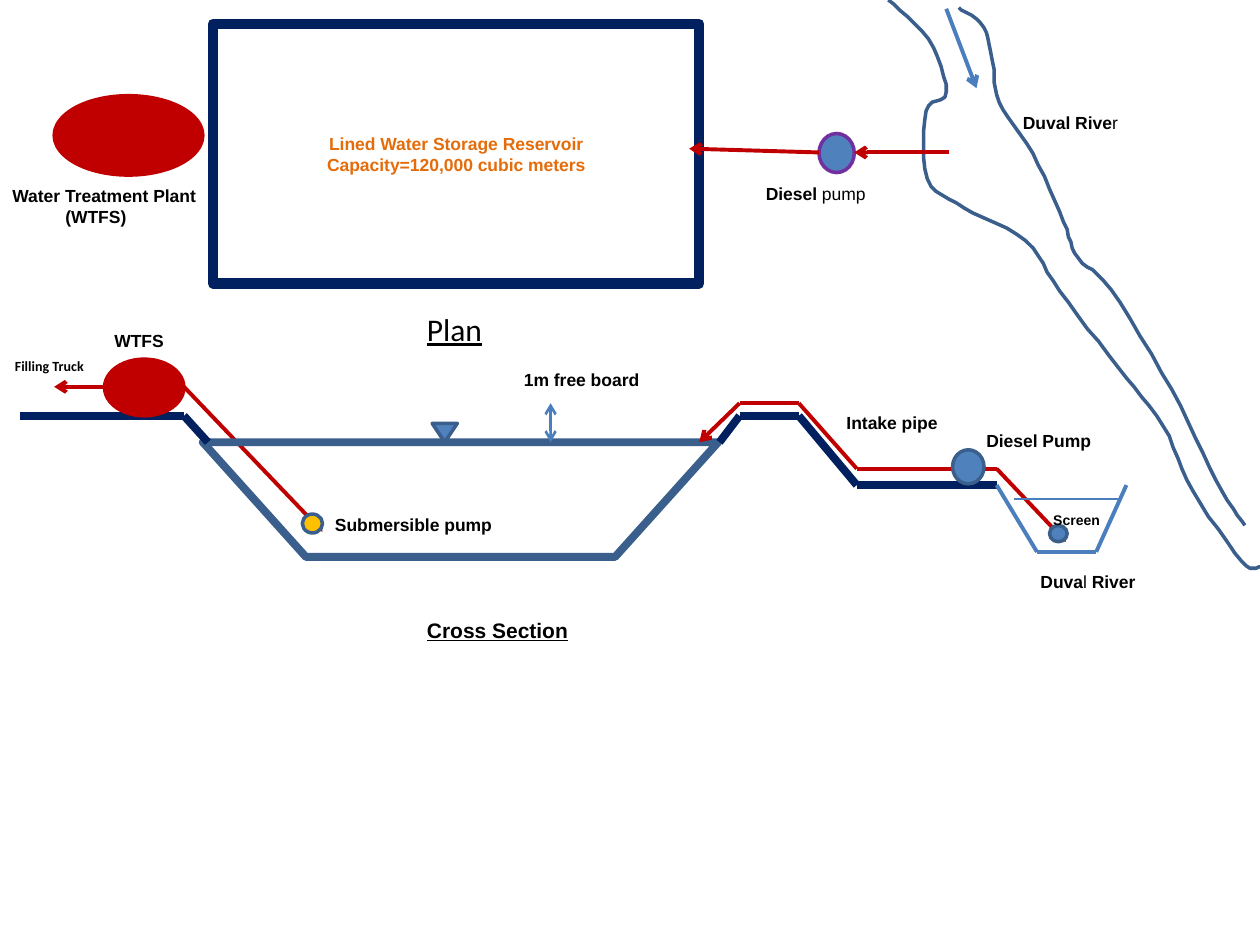
from itertools import pairwise
from pptx import Presentation
from pptx.dml.color import RGBColor as Rgb
from pptx.enum.shapes import MSO_CONNECTOR as Conn, MSO_SHAPE as Kind
from pptx.enum.text import MSO_ANCHOR as Anchor, MSO_AUTO_SIZE as Auto, PP_ALIGN as Align
from pptx.oxml.ns import qn
from pptx.util import Emu, Inches, Pt
from lxml.etree import SubElement as Sub

COLS = 1000
WIDE, HIGH = Inches(10), Inches(7.5)
CELL = WIDE // COLS
HUES = {
    "navy": "002060", "red": "C00000", "blue": "4F81BD", "steel": "3A5F8C",
    "sky": "4B7EBC", "plum": "7030A0", "gold": "FFC000", "rust": "E46C0A",
    "black": "000000",
}
THIN, PIPE, EARTH, WALL = 0.75, 2.25, 4.5, 6
END, BOTH = ("tailEnd",), ("headEnd", "tailEnd")
BANKS = {
    "east": [(761, 6), (781, 22), (788, 50), (793, 81), (820, 122), (844, 176),
             (856, 205), (882, 230), (930, 309), (965, 381), (988, 417)],
    "west": [(705, 0), (737, 31), (751, 73), (735, 88), (736, 142), (765, 165),
             (814, 191), (841, 231), (887, 291), (923, 338), (947, 390),
             (985, 445), (1000, 450)],
}
LABELS = {
    "plan": [
        ((598, 140), 100, ["Diesel", " pump"]),
        ((802, 84), 96, ["Duval Rive", "r"]),
    ],
    "section": [
        ((662, 322), 96, ["Intake pipe"]),
        ((773, 336), 104, ["Diesel Pump"]),
        ((256, 403), 146, ["Submersible pump"]),
        ((81, 257), 60, ["WTFS"]),
        ((816, 448), 96, ["Duva", "l ", "River"]),
        ((406, 288), 113, ["1m free board"]),
    ],
}


def hue(name):
    """Return the named colour."""
    return Rgb.from_string(HUES[name])


def cells(*nums):
    """Turn grid counts into lengths."""
    return [Emu(n * CELL) for n in nums]


def draw(item, fill, line, size):
    """Set fill and outline of a shape."""
    item.shadow.inherit = False
    if fill:
        item.fill.solid()
        item.fill.fore_color.rgb = hue(fill)
    else:
        item.fill.background()
    item.line.color.rgb = hue(line)
    item.line.width = Pt(size)


def shape(page, kind, box, fill, line, size=2):
    """Add a preset shape."""
    item = page.shapes.add_shape(kind, *cells(*box))
    draw(item, fill, line, size)
    return item


def oval(page, mid, wide, high, fill, line):
    """Add an ellipse around its centre."""
    box = (mid[0] - wide // 2, mid[1] - high // 2, wide, high)
    shape(page, Kind.OVAL, box, fill, line)


def blend(a, b, c, d, t):
    """Return the Catmull-Rom value between b and c at share t."""
    bend = (2 * a - 5 * b + 4 * c - d) * t + (3 * b - a - 3 * c + d) * t * t
    return b + t * (c - a + bend) / 2


def curve(knots, steps=6):
    """Return points on a smooth curve through the knots."""
    ends = [knots[0], *knots, knots[-1]]
    spans = zip(ends, ends[1:], ends[2:], ends[3:])
    dots = [
        tuple(blend(*axis, i / steps) for axis in zip(*span))
        for span in spans for i in range(steps)
    ]
    return dots + [knots[-1]]


def bank(page, knots):
    """Add a smooth river bank."""
    dots = curve(knots)
    pen = page.shapes.build_freeform(*dots[0], scale=CELL)
    pen.add_line_segments(dots[1:], close=False)
    draw(pen.convert_to_shape(), None, "steel", 2)


def link(page, start, end, line, size=PIPE, tips=()):
    """Add a straight line with optional arrow tips."""
    item = page.shapes.add_connector(Conn.STRAIGHT, *cells(*start, *end))
    item.line.color.rgb = hue(line)
    item.line.width = Pt(size)
    props = item._element.spPr
    for tip in tips:
        Sub(props.find(qn("a:ln")), qn("a:" + tip), type="arrow")
    Sub(props, qn("a:effectLst"))


def chain(page, dots, line, size=PIPE, tips=()):
    """Join points by lines, with tips on the last one."""
    *pairs, last = pairwise(dots)
    for pair in pairs:
        link(page, *pair, line, size)
    link(page, *last, line, size, tips)


def style(run, size, face="Arial", tint="black", bold=True, under=None):
    """Format one run."""
    font = run.font
    font.size, font.name, font.bold, font.underline = Pt(size), face, bold, under
    font.color.rgb = hue(tint)


def label(page, spot, wide, parts, size=10, face="Arial", bold=True, under=None):
    """Add a one-line label whose parts switch between bold and plain."""
    high = round(size * 100 / 60) + 10
    frame = page.shapes.add_textbox(*cells(*spot, wide, high)).text_frame
    frame.word_wrap = False
    frame.auto_size = Auto.SHAPE_TO_FIT_TEXT
    for i, part in enumerate(parts):
        run = frame.paragraphs[0].add_run()
        run.text = part
        style(run, size, face, bold=bold and i % 2 == 0, under=under)
    return frame


def basin(page):
    """Add the reservoir in plan with its centred caption."""
    item = shape(page, Kind.RECTANGLE, (169, 19, 386, 206), None, "navy", WALL)
    frame = item.text_frame
    frame.vertical_anchor = Anchor.MIDDLE
    frame.text = "Lined Water Storage Reservoir\nCapacity=120,000 cubic meters"
    for para in frame.paragraphs:
        para.alignment = Align.CENTER
        style(para.runs[0], 10, tint="rust")


def plant(page):
    """Add the treatment plant in plan with its two-line label."""
    oval(page, (102, 107), 118, 63, "red", "red")
    frame = label(page, (0, 142), 169, ["Water Treatment Plant"])
    frame.word_wrap = True
    para = frame.add_paragraph()
    para.text = "(WTFS)"
    para._p.get_or_add_pPr().set("marL", str(42 * CELL))
    style(para.runs[0], 10)


def plan(page):
    """Draw the view from above."""
    basin(page)
    plant(page)
    pump, wide = (664, 121), 28
    oval(page, pump, wide, 31, "blue", "plum")
    for knots in BANKS.values():
        bank(page, knots)
    link(page, (751, 7), (775, 70), "sky", tips=END)
    link(page, (753, pump[1]), (pump[0] + wide // 2, pump[1]), "red", tips=END)
    link(page, (pump[0] - wide // 2, pump[1]), (547, 118), "red", tips=END)
    for item in LABELS["plan"]:
        label(page, *item)
    label(page, (329, 241), 64, ["Plan"], 18, "Calibri", False, True)


def store(page, crest, water):
    """Draw the plant, its pump and the reservoir in section."""
    hub, left, right, pump = 307, 83, 146, (248, 415)
    link(page, (16, crest), (right, crest), "navy", EARTH)
    oval(page, ((left + right) // 2, hub), right - left, 45, "red", "red")
    link(page, (right, hub), (256, 422), "red", tips=END)
    box = (161, water, 409, 91)
    shape(page, Kind.FLOWCHART_MANUAL_OPERATION, box, None, "steel", EARTH)
    link(page, (165, water), (right, crest), "navy", EARTH)
    link(page, (left, hub), (43, hub), "red", tips=END)
    shape(page, Kind.FLOWCHART_MERGE, (343, water - 15, 20, 15), "blue", "steel")
    oval(page, pump, 16, 15, "gold", "steel")
    link(page, (437, 320), (437, water), "sky", 1.5, BOTH)


def intake(page, crest, water, land):
    """Draw the bank, the intake pipe and the river in section."""
    top, foot, shore, bed = (587, 634), 680, 791, 438
    over, low = crest - 10, land - 13
    ground = [(571, water), (top[0], crest), (top[1], crest), (foot, land), (shore, land)]
    chain(page, ground, "navy", EARTH)
    pipe = [(shore, low), (foot, low), (top[1], over), (top[0], over), (555, water)]
    chain(page, pipe, "red", tips=END)
    chain(page, [(shore, land), (823, bed), (870, bed), (894, land)], "sky")
    link(page, (shore, low), (846, 430), "red", tips=END)
    link(page, (805, land + 11), (888, land + 11), "sky", THIN)
    oval(page, (768, low - 2), 25, 27, "blue", "steel")
    oval(page, (840, 423), 14, 13, "blue", "steel")


def section(page):
    """Draw the cut through reservoir and river."""
    crest, water, land = 330, 351, 385
    store(page, crest, water)
    intake(page, crest, water, land)
    for item in LABELS["section"]:
        label(page, *item)
    label(page, (329, 485), 133, ["Cross Section"], 12, under=True)
    label(page, (2, 279), 76, ["Filling Truck"], 8, "Calibri")
    label(page, (826, 401), 58, ["Screen"], 8)


def main():
    """Build and save the slide."""
    deck = Presentation()
    deck.slide_width, deck.slide_height = WIDE, HIGH
    page = deck.slides.add_slide(deck.slide_layouts[6])
    plan(page)
    section(page)
    deck.save("out.pptx")


if __name__ == "__main__":
    main()
